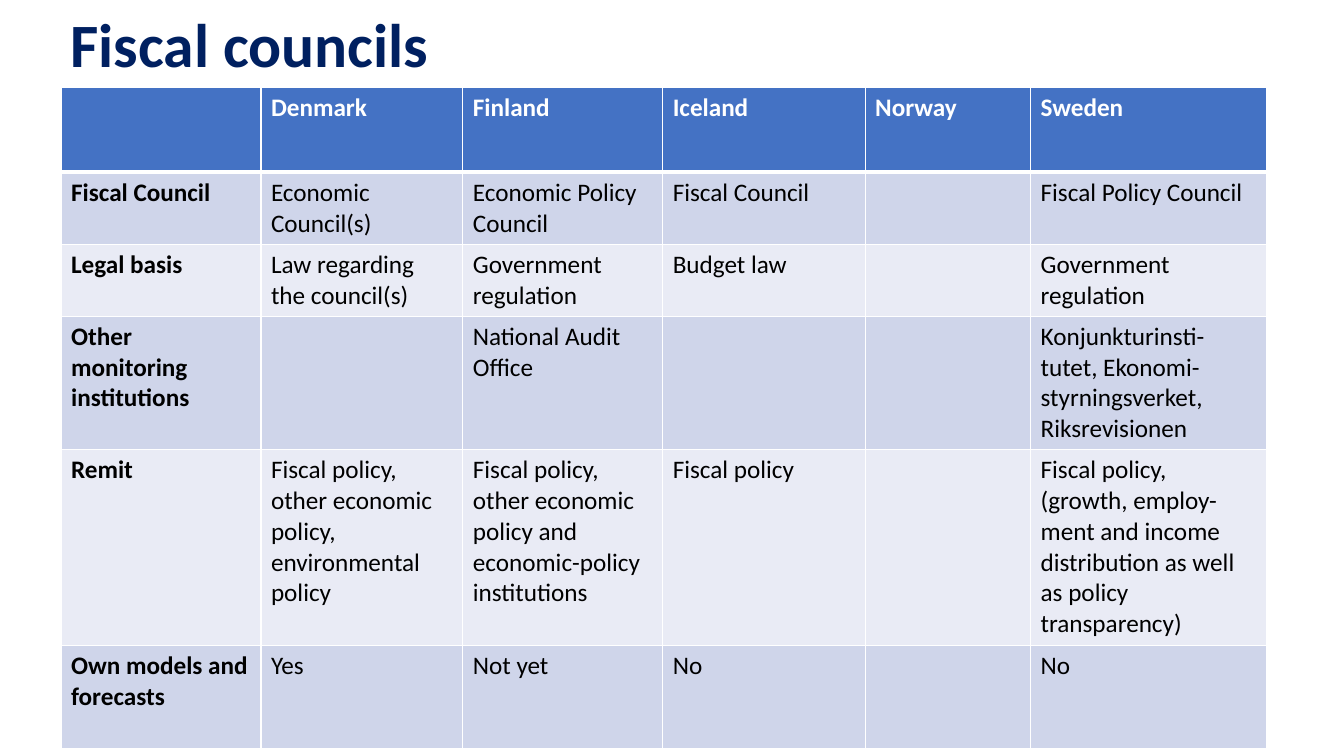
from lxml.etree import SubElement as Sub
from pptx import Presentation
from pptx.dml.color import RGBColor
from pptx.enum.text import MSO_ANCHOR as Anchor
from pptx.oxml.ns import qn
from pptx.util import Pt

FONT = "Calibri"
WHITE, BLACK, NAVY = "FFFFFF", "000000", "002060"
HEAD, BANDS = "4472C4", ("CFD5EA", "E9EBF5")
WIDTHS = (142.8, 144.2, 142.8, 144.6, 118.2, 168.9)
HEIGHTS = (60.9, 51.4, 51.4, 95.4, 139.7, 73.5)
ROWS = (
    ("", "Denmark", "Finland", "Iceland", "Norway", "Sweden"),
    ("Fiscal Council", "Economic Council(s)", "Economic Policy Council",
     "Fiscal Council", "", "Fiscal Policy Council"),
    ("Legal basis", "Law regarding the council(s)", "Government regulation",
     "Budget law", "", "Government regulation"),
    ("Other monitoring institutions", "", "National Audit Office", "", "",
     "Konjunkturinsti-tutet, Ekonomi-styrningsverket, Riksrevisionen"),
    ("Remit", "Fiscal policy, other economic policy, environmental policy",
     "Fiscal policy, other economic policy and economic-policy institutions",
     "Fiscal policy", "",
     "Fiscal policy, (growth, employ-ment and income distribution "
     "as well as policy transparency)"),
    ("Own models and forecasts", "Yes", "Not yet", "No", "", "No"),
)


def paint(target, color):
    """Give a fill one solid colour."""
    target.solid()
    target.fore_color.rgb = RGBColor.from_string(color)


def write(frame, text, size, color, bold):
    """Put styled text in a frame."""
    frame.text = text
    for run in frame.paragraphs[0].runs:
        run.font.name = FONT
        run.font.size = Pt(size)
        run.font.bold = bold
        paint(run.font.fill, color)


def edge(cell, side, width):
    """Draw one white border of a cell."""
    line = Sub(cell._tc.get_or_add_tcPr(), qn(f"a:ln{side}"), w=str(Pt(width)))
    Sub(Sub(line, qn("a:solidFill")), qn("a:srgbClr"), val=WHITE)


def add_title(slide, text):
    """Add the slide heading."""
    box = slide.shapes.add_textbox(Pt(43.2), Pt(6.5), Pt(851), Pt(55.4))
    frame = box.text_frame
    frame.word_wrap = True
    frame.vertical_anchor = Anchor.MIDDLE
    write(frame, text, 44, NAVY, True)
    frame.paragraphs[0].line_spacing = 0.9


def fill_cell(cell, text, row, col):
    """Style a cell by its place in the table."""
    head = row == 0
    write(cell.text_frame, text, 18, WHITE if head else BLACK, head or col == 0)
    for side in "LRTB":
        thick = (side == "B" and head) or (side == "T" and row == 1)
        edge(cell, side, 3 if thick else 1)
    paint(cell.fill, HEAD if head else BANDS[(row - 1) % 2])


def add_grid(slide):
    """Add the table of councils by country."""
    frame = slide.shapes.add_table(len(ROWS), len(WIDTHS), Pt(43.6), Pt(62.2),
                                   Pt(sum(WIDTHS)), Pt(sum(HEIGHTS)))
    table = frame.table
    for col, width in zip(table.columns, WIDTHS):
        col.width = Pt(width)
    for row, height in zip(table.rows, HEIGHTS):
        row.height = Pt(height)
    for row, texts in enumerate(ROWS):
        for col, text in enumerate(texts):
            fill_cell(table.cell(row, col), text, row, col)


def main():
    """Build and save the slide."""
    deck = Presentation()
    deck.slide_width, deck.slide_height = Pt(960), Pt(540)
    slide = deck.slides.add_slide(deck.slide_layouts[6])
    add_title(slide, "Fiscal councils")
    add_grid(slide)
    deck.save("out.pptx")


if __name__ == "__main__":
    main()
